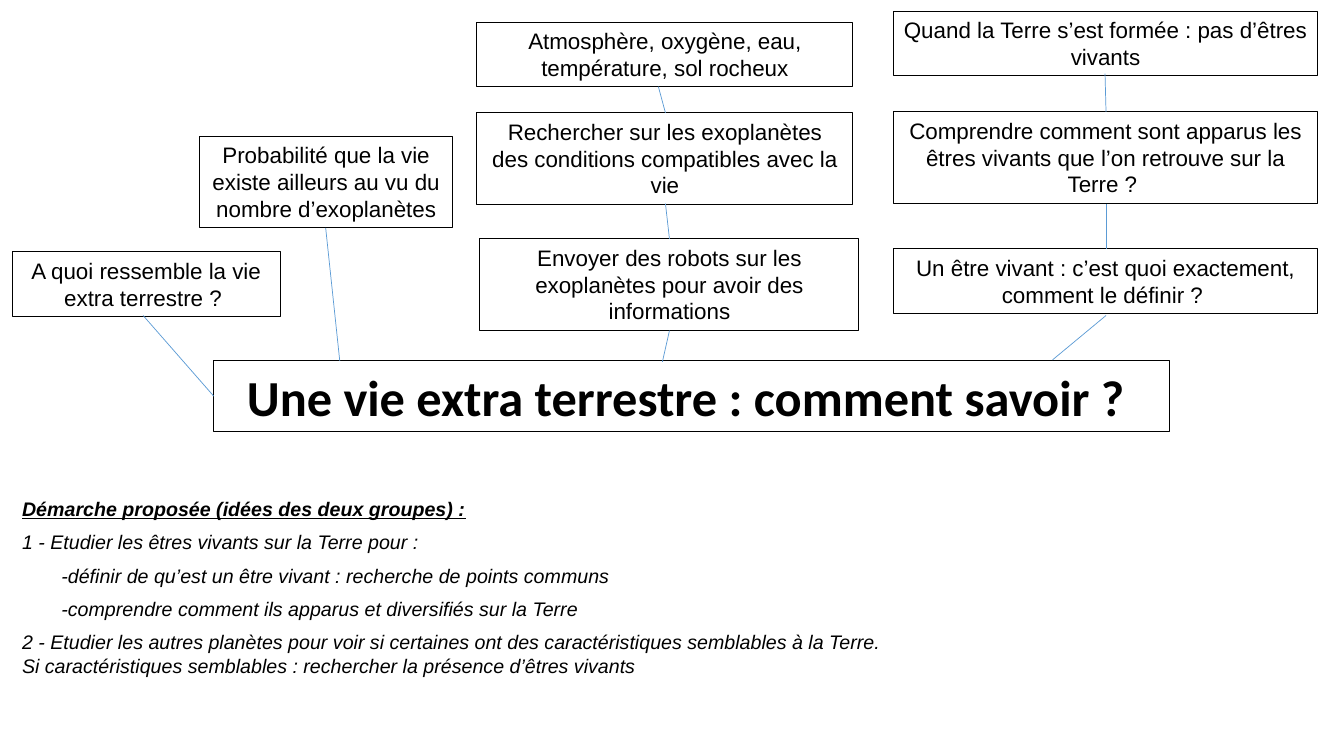
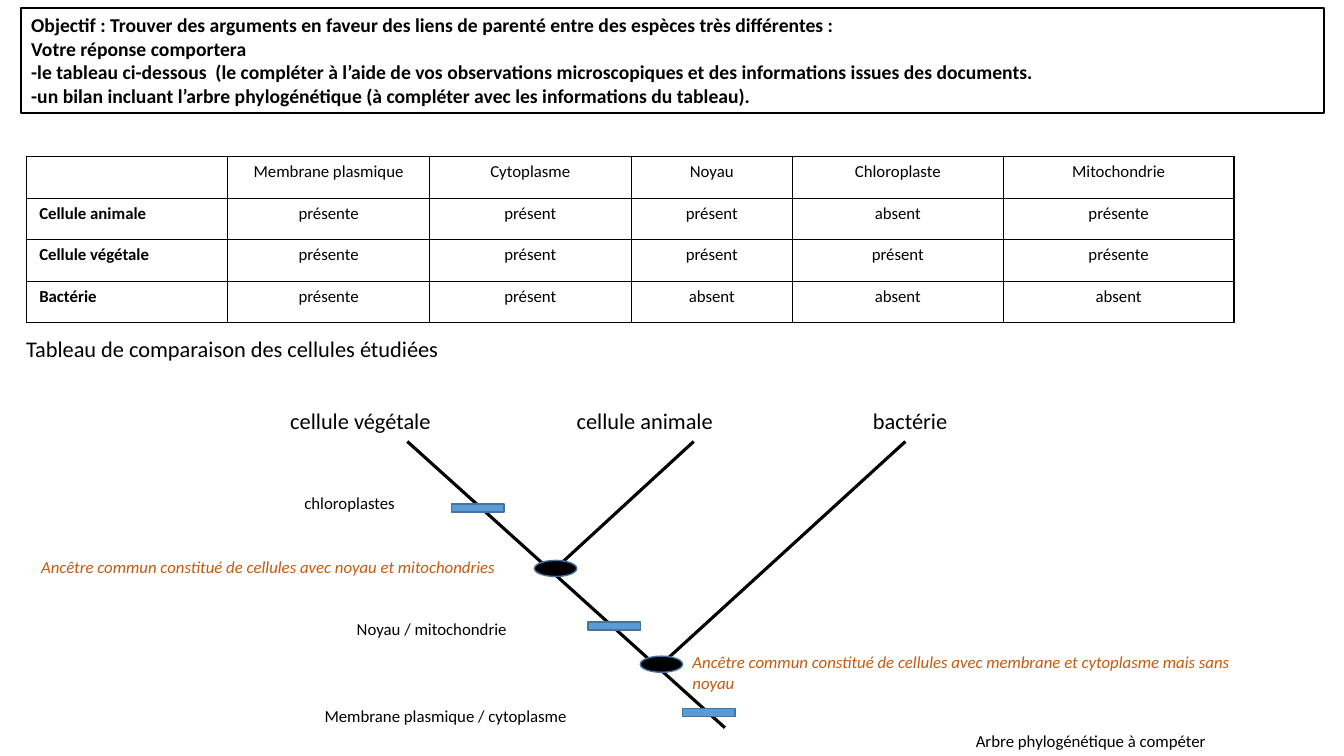
from dataclasses import dataclass
from pptx import Presentation
from pptx.dml.color import RGBColor
from pptx.enum.shapes import MSO_CONNECTOR, MSO_SHAPE
from pptx.enum.text import MSO_ANCHOR, MSO_AUTO_SIZE, PP_ALIGN
from pptx.oxml import parse_xml
from pptx.oxml.ns import nsdecls, qn
from pptx.util import Inches, Pt
from lxml import etree

LINE = MSO_CONNECTOR.STRAIGHT
RECT, OVAL = MSO_SHAPE.RECTANGLE, MSO_SHAPE.OVAL
LEFT, MID = PP_ALIGN.LEFT, PP_ALIGN.CENTER
TOP, FIXED = MSO_ANCHOR.TOP, MSO_AUTO_SIZE.NONE


@dataclass(frozen=True)
class Theme:
    ink: str = "000000"
    paper: str = "FFFFFF"
    blue: str = "5B9BD5"
    edge: str = "43739E"
    rust: str = "C55A11"
    sans: str = "Arial"
    body: str = "Calibri"
    huge: int = 36
    big: int = 16
    mid: int = 14
    small: int = 12
    gap: int = 7


T = Theme()

TITLE = "Une vie extra terrestre : comment savoir ? "
IDEAS = [
    (1.98, 1.35, 2.51, 0.91, "Probabilité que la vie existe ailleurs au vu du nombre d’exoplanètes"),
    (4.73, 1.12, 3.73, 0.91, "Rechercher sur les exoplanètes des conditions compatibles avec la vie"),
    (4.73, 0.22, 3.73, 0.64, "Atmosphère, oxygène, eau, température, sol rocheux"),
    (8.86, 2.47, 4.21, 0.64, "Un être vivant : c’est quoi exactement, comment le définir ? "),
    (4.76, 2.37, 3.76, 0.91, "Envoyer des robots sur les exoplanètes pour avoir des informations"),
    (8.86, 1.11, 4.21, 0.91, "Comprendre comment sont apparus les êtres vivants que l’on retrouve sur la Terre ? "),
    (8.86, 0.11, 4.21, 0.64, "Quand la Terre s’est formée : pas d’êtres vivants"),
    (0.12, 2.5, 2.66, 0.64, "A quoi ressemble la vie extra terrestre ? "),
]
LINKS = [
    (3.37, 3.58, 3.23, 2.26), (6.57, 3.59, 6.64, 3.28),
    (10.44, 3.57, 10.97, 3.13), (10.97, 2.47, 10.97, 2.02),
    (6.64, 2.37, 6.6, 2.02), (6.6, 1.12, 6.53, 0.86),
    (10.97, 1.11, 10.96, 0.73), (2.12, 3.93, 1.42, 3.13),
]
PLAN = [
    (0, "Démarche proposée (idées des deux groupes) :"),
    (0, "1 - Etudier les êtres vivants sur la Terre pour :"),
    (0.39, "-définir de qu’est un être vivant : recherche de points communs"),
    (0.39, "-comprendre comment ils apparus et diversifiés sur la Terre"),
    (0, "2 - Etudier les autres planètes pour voir si certaines ont des caractéristiques "
        "semblables à la Terre. Si caractéristiques semblables : rechercher la présence d’êtres vivants"),
]

GOAL = [
    "Objectif : Trouver des arguments en faveur des liens de parenté entre des espèces très différentes :",
    "Votre réponse comportera",
    "-le tableau ci-dessous  (le compléter à l’aide de vos observations microscopiques "
    "et des informations issues des documents.",
    "-un bilan incluant l’arbre phylogénétique (à compléter avec les informations du tableau).",
]
CELLS = [
    ["", "Membrane plasmique", "Cytoplasme", "Noyau", "Chloroplaste", "Mitochondrie"],
    ["Cellule animale", "présente", "présent", "présent", "absent", "présente"],
    ["Cellule végétale", "présente", "présent", "présent", "présent", "présente"],
    ["Bactérie", "présente", "présent", "absent", "absent", "absent"],
]
COLS = [2, 2, 2, 1.6, 2.09, 2.29]
ROWS = [0.42, 0.41, 0.41, 0.41]
TREE = [(4.04, 4.38, 7.19, 7.22), (6.88, 4.38, 5.51, 5.64), (8.98, 4.38, 6.56, 6.59)]
NODES = [(5.3, 5.56), (6.35, 6.51)]
BARS = [(6.77, 7.03), (5.83, 6.17), (4.48, 5)]
TIPS = [(2.78, "cellule végétale"), (5.62, "cellule animale"), (8.56, "bactérie")]
TRAITS = [
    (9.58, 7.2, 3.75, "Arbre phylogénétique à compéter"),
    (3.12, 6.95, 3.75, "Membrane plasmique / cytoplasme"),
    (3.44, 6.09, 2.4, "Noyau / mitochondrie"),
    (2.92, 4.84, 1.77, "chloroplastes"),
]
ROOTS = [
    (6.77, 6.42, 5.94, 0.5, "Ancêtre commun constitué de cellules avec membrane et cytoplasme mais sans noyau"),
    (0.31, 5.47, 5.94, 0.3, "Ancêtre commun constitué de cellules avec noyau et mitochondries"),
]


def rgb(tone):
    return RGBColor.from_string(tone)


def write(para, text, size, font=T.body, tone=T.ink, align=LEFT, bold=False, slant=False, under=False):
    para.alignment = align
    run = para.add_run()
    run.text = text
    face = run.font
    face.size, face.name = Pt(size), font
    face.bold, face.italic, face.underline = bold, slant, under
    face.color.rgb = rgb(tone)


def fill(frame, lines, size, **look):
    frame.word_wrap = True
    frame.auto_size = FIXED
    frame.vertical_anchor = TOP
    frame.margin_left = frame.margin_right = Inches(0.1)
    frame.margin_top = frame.margin_bottom = Inches(0.05)
    for i, line in enumerate(lines):
        para = frame.paragraphs[0] if i == 0 else frame.add_paragraph()
        write(para, line, size, **look)


def paint(shape, tone, edge, width):
    if tone:
        shape.fill.solid()
        shape.fill.fore_color.rgb = rgb(tone)
    else:
        shape.fill.background()
    shape.line.color.rgb = rgb(edge)
    shape.line.width = Pt(width)


def form(slide, kind, spot, tone, edge, width):
    shape = slide.shapes.add_shape(kind, *map(Inches, spot))
    shape.shadow.inherit = False
    paint(shape, tone, edge, width)
    return shape


def label(slide, spot, text, size, **look):
    box = slide.shapes.add_textbox(*map(Inches, spot))
    fill(box.text_frame, [text], size, **look)


def join(slide, ends, tone, width):
    line = slide.shapes.add_connector(LINE, *map(Inches, ends))
    line.line.color.rgb = rgb(tone)
    line.line.width = Pt(width)
    etree.SubElement(line._element.spPr, qn("a:effectLst"))


def start(deck, spot, lines, size, width, tone=None, align=LEFT):
    slide = deck.slides.add_slide(deck.slide_layouts[5])
    head = slide.shapes.title
    head.left, head.top, head.width, head.height = map(Inches, spot)
    paint(head, tone, T.ink, width)
    fill(head.text_frame, lines, size, bold=True, align=align)
    return slide


def frame(cell):
    props = cell._tc.get_or_add_tcPr()
    for i, side in enumerate("LRTB"):
        props.insert(i, parse_xml(
            f'<a:ln{side} {nsdecls("a")} w="12700"><a:solidFill>'
            f'<a:srgbClr val="{T.ink}"/></a:solidFill></a:ln{side}>'))


def grid(slide):
    spot = (0.26, 1.55, sum(COLS), sum(ROWS))
    table = slide.shapes.add_table(len(ROWS), len(COLS), *map(Inches, spot)).table
    table.first_row = table.horz_banding = False
    for col, width in zip(table.columns, COLS):
        col.width = Inches(width)
    for r, (row, texts) in enumerate(zip(table.rows, CELLS)):
        row.height = Inches(ROWS[r])
        for c, text in enumerate(texts):
            cell = table.cell(r, c)
            cell.fill.background()
            cell.margin_left = cell.margin_right = Inches(0.13)
            cell.margin_top = cell.margin_bottom = Inches(0.05)
            frame(cell)
            if text:
                write(cell.text_frame.paragraphs[0], text, T.small,
                      align=MID if c else LEFT, bold=c == 0)


def ideas(deck):
    slide = start(deck, (2.12, 3.58, 9.48, 0.7), [TITLE], T.huge, 0.75, align=MID)
    for *spot, text in IDEAS:
        box = form(slide, RECT, spot, None, T.ink, 0.75)
        fill(box.text_frame, [text], T.big, font=T.sans, align=MID)
    for ends in LINKS:
        join(slide, ends, T.blue, 0.5)
    plan = slide.shapes.add_textbox(*map(Inches, (0.12, 4.88, 8.88, 1.99))).text_frame
    fill(plan, [text for _, text in PLAN], T.mid, font=T.sans, slant=True)
    for para, (dent, _) in zip(plan.paragraphs, PLAN):
        para._p.get_or_add_pPr().set("marL", str(Inches(dent)))
    for para in plan.paragraphs[1:]:
        para.space_before = Pt(T.gap)
    lead = plan.paragraphs[0].runs[0].font
    lead.bold = lead.underline = True


def kinship(deck):
    slide = start(deck, (0.21, 0.08, 12.92, 1.04), GOAL, T.mid, 1.5, T.paper)
    grid(slide)
    label(slide, (0.16, 3.28, 7.77, 0.37), "Tableau de comparaison des cellules étudiées", T.big)
    for ends in TREE:
        join(slide, ends, T.ink, 2.25)
    for x, y in NODES:
        form(slide, OVAL, (x, y, 0.42, 0.16), T.ink, T.edge, 1)
    for x, y in BARS:
        form(slide, RECT, (x, y, 0.52, 0.08), T.blue, T.edge, 1)
    for x, text in TIPS:
        label(slide, (x, 3.99, 2.31, 0.37), text, T.big)
    for x, y, w, text in TRAITS:
        label(slide, (x, y, w, 0.3), text, T.small)
    for *spot, text in ROOTS:
        label(slide, spot, text, T.small, tone=T.rust, slant=True)


def main():
    deck = Presentation()
    deck.slide_width, deck.slide_height = Inches(13.33), Inches(7.5)
    ideas(deck)
    kinship(deck)
    deck.save("out.pptx")


if __name__ == "__main__":
    main()
